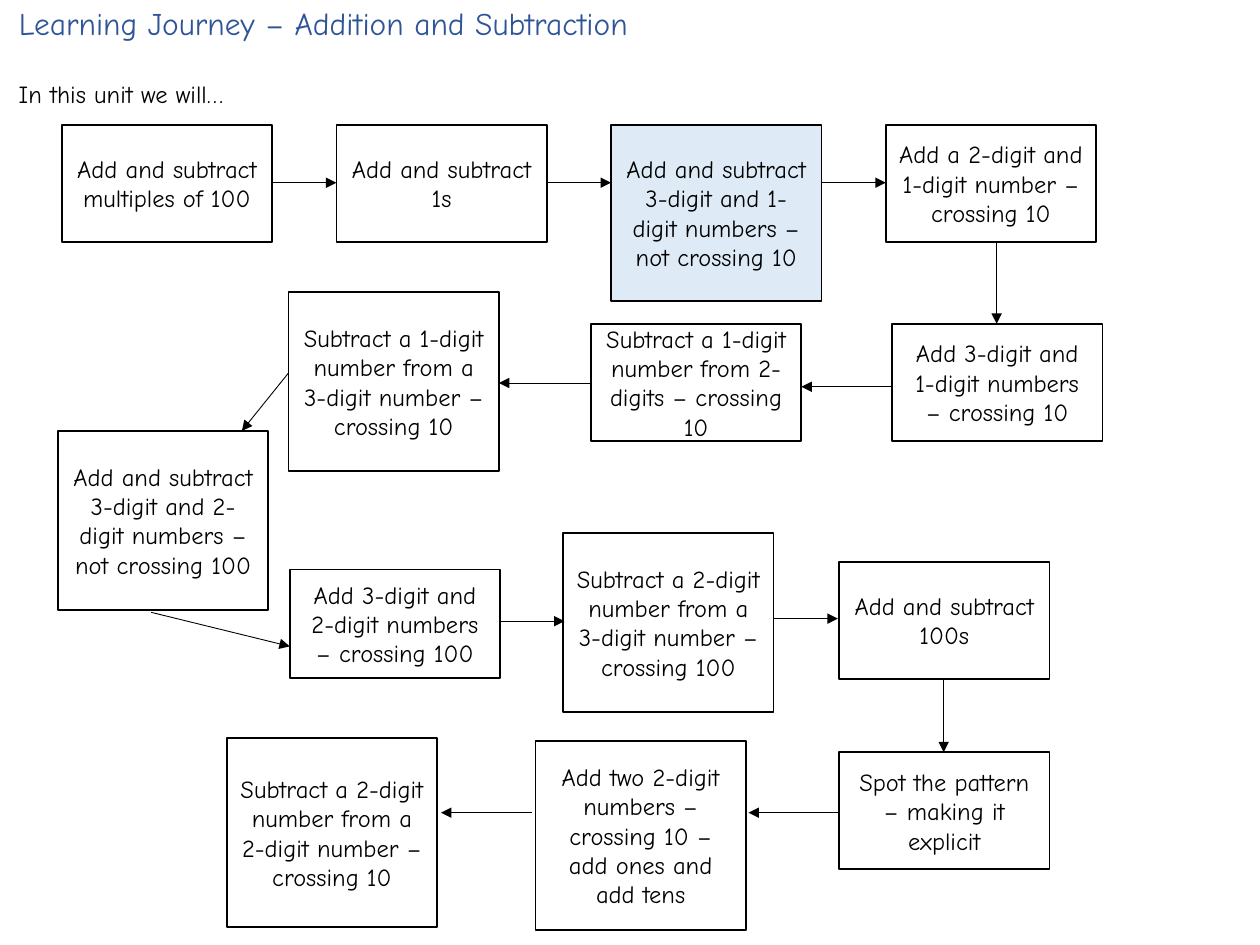
from lxml import etree
from pptx import Presentation
from pptx.dml.color import RGBColor
from pptx.enum.shapes import MSO_CONNECTOR, MSO_SHAPE
from pptx.enum.text import MSO_ANCHOR, PP_ALIGN
from pptx.oxml.ns import qn
from pptx.util import Inches, Pt

RECTANGLE = MSO_SHAPE.RECTANGLE
STRAIGHT = MSO_CONNECTOR.STRAIGHT
TOP, MIDDLE = MSO_ANCHOR.TOP, MSO_ANCHOR.MIDDLE
LEFT, CENTER = PP_ALIGN.LEFT, PP_ALIGN.CENTER

BLACK, WHITE, BLUE, HIGHLIGHT = "000000", "FFFFFF", "2F5597", "DEEBF7"
TITLE_ONLY = 5
STEP_WIDTH = 1.67
ROW_LEFT, ROW_PITCH = 0.49, 2.18

# Steps in learning order: text, left, top, height
STEPS = [
    ("Add and subtract multiples of 100", ROW_LEFT, 0.99, 0.93),
    ("Add and subtract 1s", ROW_LEFT + ROW_PITCH, 0.99, 0.93),
    ("Add and subtract 3-digit and 1-digit numbers – not crossing 10",
     ROW_LEFT + 2 * ROW_PITCH, 0.99, 1.4),
    ("Add a 2-digit and 1-digit number – crossing 10",
     ROW_LEFT + 3 * ROW_PITCH, 0.99, 0.93),
    ("Add 3-digit and 1-digit numbers – crossing 10", 7.08, 2.57, 0.93),
    ("Subtract a 1-digit number from 2-digits – crossing 10", 4.69, 2.57, 0.93),
    ("Subtract a 1-digit number from a 3-digit number – crossing 10", 2.29, 2.32, 1.42),
    ("Add and subtract 3-digit and 2-digit numbers – not crossing 100", 0.46, 3.42, 1.42),
    ("Add 3-digit and 2-digit numbers – crossing 100", 2.3, 4.52, 0.86),
    ("Subtract a 2-digit number from a 3-digit number – crossing 100", 4.47, 4.23, 1.42),
    ("Add and subtract 100s", 6.66, 4.46, 0.93),
    ("Spot the pattern – making it explicit", 6.66, 5.97, 0.93),
    ("Add two 2-digit numbers – crossing 10 – add ones and add tens", 4.25, 5.88, 1.5),
    ("Subtract a 2-digit number from a 2-digit number – crossing 10", 1.8, 5.86, 1.5),
]
CURRENT_STEP = 2

# Arrows from each step to the next: start x, start y, end x, end y
ARROWS = [
    (2.16, 1.45, 2.67, 1.45), (4.34, 1.45, 4.85, 1.45), (6.52, 1.45, 7.03, 1.45),
    (7.91, 1.92, 7.91, 2.57), (7.08, 3.07, 6.36, 3.07), (4.69, 3.04, 3.96, 3.04),
    (2.29, 2.96, 1.92, 3.42), (1.2, 4.86, 2.3, 5.13), (3.96, 4.93, 4.48, 4.93),
    (6.14, 4.91, 6.65, 4.91), (7.49, 5.4, 7.49, 5.97), (6.66, 6.45, 5.94, 6.45),
    (4.22, 6.45, 3.5, 6.45),
]


def color(value):
    return RGBColor.from_string(value)


def write(shape, text, size=14, font="Comic Neue", fill=BLACK,
          align=LEFT, anchor=TOP, wrap=True):
    frame = shape.text_frame
    frame.word_wrap = wrap
    frame.vertical_anchor = anchor
    paragraph = frame.paragraphs[0]
    paragraph.alignment = align
    run = paragraph.add_run()
    run.text = text
    run.font.size = Pt(size)
    run.font.name = font
    run.font.color.rgb = color(fill)


class JourneySlide:
    box_line = Pt(1)
    arrow_line = Pt(0.5)

    def __init__(self, presentation):
        self.slide = presentation.slides.add_slide(presentation.slide_layouts[TITLE_ONLY])

    def title(self, text, left, top, width, height):
        title = self.slide.shapes.title
        title.left, title.top = Inches(left), Inches(top)
        title.width, title.height = Inches(width), Inches(height)
        write(title, text, size=18, fill=BLUE, wrap=False)

    def label(self, text, left, top, width, height):
        box = self.slide.shapes.add_textbox(
            Inches(left), Inches(top), Inches(width), Inches(height))
        write(box, text, wrap=False)

    def step(self, text, left, top, height, fill):
        box = self.slide.shapes.add_shape(
            RECTANGLE, Inches(left), Inches(top), Inches(STEP_WIDTH), Inches(height))
        box.shadow.inherit = False
        box.fill.solid()
        box.fill.fore_color.rgb = color(fill)
        box.line.color.rgb = color(BLACK)
        box.line.width = self.box_line
        write(box, text, align=CENTER, anchor=MIDDLE)

    def arrow(self, *ends):
        connector = self.slide.shapes.add_connector(STRAIGHT, *map(Inches, ends))
        connector.line.color.rgb = color(BLACK)
        connector.line.width = self.arrow_line
        properties = connector._element.spPr
        etree.SubElement(properties.find(qn("a:ln")), qn("a:tailEnd"), type="triangle")
        etree.SubElement(properties, qn("a:effectLst"))


def main():
    presentation = Presentation()
    presentation.slide_width, presentation.slide_height = Inches(10), Inches(7.5)
    journey = JourneySlide(presentation)

    # Heading
    journey.title("Learning Journey – Addition and Subtraction", 0.05, -0.02, 5.47, 0.4)
    journey.label("In this unit we will…", 0.05, 0.58, 2, 0.34)

    # Steps, with the current one highlighted
    for index, (text, left, top, height) in enumerate(STEPS):
        fill = HIGHLIGHT if index == CURRENT_STEP else WHITE
        journey.step(text, left, top, height, fill)

    # Path between the steps
    for ends in ARROWS:
        journey.arrow(*ends)

    presentation.save("out.pptx")


if __name__ == "__main__":
    main()
